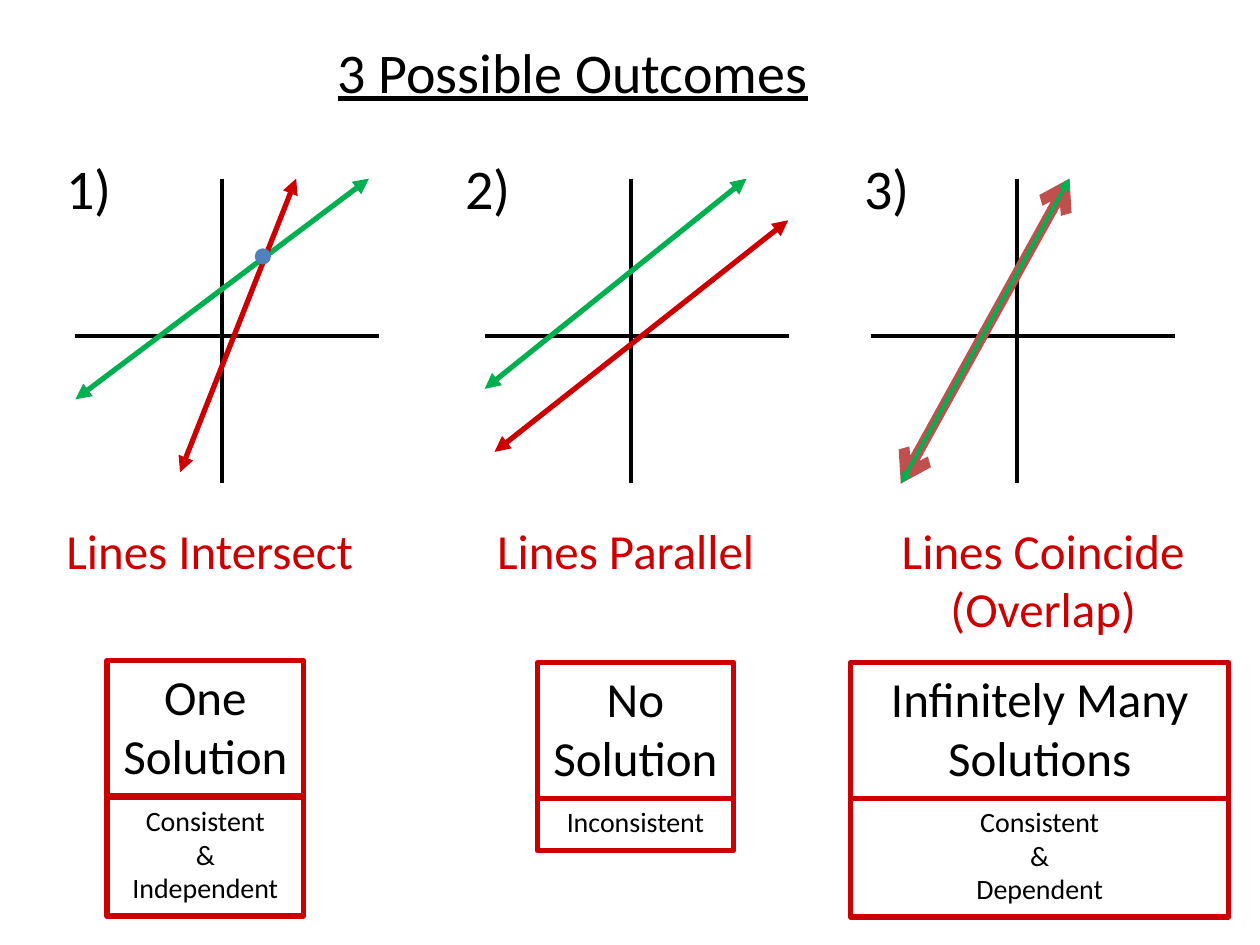
from dataclasses import dataclass

from lxml import etree
from pptx import Presentation
from pptx import util as u
from pptx.dml.color import RGBColor
from pptx.enum import shapes, text
from pptx.oxml import ns


@dataclass(frozen=True)
class Theme:
    font: str = "Calibri"
    black: str = "000000"
    red: str = "CC0000"
    green: str = "00B050"
    brick: str = "C0504D"
    blue: str = "4F81BD"
    heading: int = 32
    body: int = 28
    note: int = 16
    axis: float = 2.25
    rule: float = 3


THEME = Theme()
LEFT, CENTER = text.PP_ALIGN.LEFT, text.PP_ALIGN.CENTER


def set_line(line, color, width):
    line.color.rgb = RGBColor.from_string(color)
    line.width = u.Pt(width)


def write(frame, words, size, color=THEME.black, align=LEFT, wrap=False):
    """Fill a text frame; \\n starts a paragraph, \\v breaks a line."""
    frame.text = words
    frame.word_wrap = wrap
    frame.auto_size = text.MSO_AUTO_SIZE.SHAPE_TO_FIT_TEXT
    frame.vertical_anchor = text.MSO_ANCHOR.TOP
    for paragraph in frame.paragraphs:
        paragraph.alignment = align
        paragraph.font.name = THEME.font
        paragraph.font.size = u.Pt(size)
        paragraph.font.color.rgb = RGBColor.from_string(color)


def add_words(slide, box, *args, **kwargs):
    label = slide.shapes.add_textbox(*map(u.Cm, box))
    write(label.text_frame, *args, **kwargs)
    return label


def add_line(slide, start, end, color, width, arrow=None):
    line = slide.shapes.add_connector(
        shapes.MSO_CONNECTOR.STRAIGHT, *map(u.Cm, (*start, *end)))
    set_line(line.line, color, width)
    if arrow:
        outline = line.line._get_or_add_ln()
        for tip in ("a:headEnd", "a:tailEnd"):
            etree.SubElement(outline, ns.qn(tip)).set("type", arrow)
    etree.SubElement(line._element.spPr, ns.qn("a:effectLst"))


def add_title(slide, box):
    title = slide.shapes.title
    title.left, title.top, title.width, title.height = map(u.Cm, box)
    write(title.text_frame, "3 Possible Outcomes", THEME.heading, wrap=True)
    title.text_frame.paragraphs[0].font.underline = True


def add_graph(slide, left, top, lines, crossing=None):
    """Axes with lines on them, all measured from the graph's corner."""
    side, y_axis, x_axis = 6.13, 2.95, 3.17
    axes = [((y_axis, 0), (y_axis, side), THEME.black, THEME.axis),
            ((0, x_axis), (side, x_axis), THEME.black, THEME.axis)]
    for (x1, y1), (x2, y2), *style in axes + lines:
        add_line(slide, (left + x1, top + y1), (left + x2, top + y2), *style)
    if crossing:
        size = 0.3
        x, y = crossing
        dot = slide.shapes.add_shape(
            shapes.MSO_SHAPE.OVAL, u.Cm(left + x - size / 2),
            u.Cm(top + y - size / 2), u.Cm(size), u.Cm(size))
        dot.shadow.inherit = False
        dot.fill.solid()
        dot.fill.fore_color.rgb = RGBColor.from_string(THEME.blue)
        set_line(dot.line, THEME.blue, 0.75)


def add_answer(slide, left, top, width, solution, kind, kind_top, kind_height):
    """Number of solutions, with the kind of system boxed beneath."""
    for box, words, size in (
            ((left, top, width, 2.74), solution, THEME.body),
            ((left, top + kind_top, width, kind_height), kind, THEME.note)):
        framed = add_words(slide, box, words, size, align=CENTER, wrap=True)
        set_line(framed.line, THEME.red, THEME.rule)


def add_outcome(slide, left, top, outcome):
    """One column: number, graph, caption and answer."""
    add_words(slide, (left, top, 1.45, 1.6), outcome["number"], THEME.heading)
    add_graph(slide, left + outcome["graph_dx"], top + 0.63,
              outcome["lines"], outcome.get("crossing"))
    dx, width, height, words, align = outcome["caption"]
    add_words(slide, (left + dx, top + 7.39, width, height), words,
              THEME.body, THEME.red, align)
    dx, dy, *answer = outcome["answer"]
    add_answer(slide, left + dx, top + dy, *answer)


GREEN = (THEME.green, THEME.rule, "triangle")
RED = (THEME.red, THEME.rule, "triangle")
OVERLAP = ((0.61, 6.15), (4.01, 0))
OUTCOMES = [
    {"number": "1)", "graph_dx": 0.43,
     "lines": [((0, 4.45), (5.92, 0), *GREEN),
               ((2.11, 5.92), (4.45, 0), *RED)],
     "crossing": (3.78, 1.57),
     "caption": (0, 6.35, 1.45, "Lines Intersect", LEFT),
     "answer": (1.07, 10.34, 3.96, "One\nSolution",
                "Consistent\v&\nIndependent", 2.77, 2.39)},
    {"number": "2)", "graph_dx": 0.64,
     "lines": [((0, 4.24), (5.28, 0), *GREEN),
               ((0.2, 5.51), (6.12, 0.84), *RED)],
     "caption": (0.64, 5.97, 1.45, "Lines Parallel", LEFT),
     "answer": (1.7, 10.39, 3.96, "No\nSolution",
                "Inconsistent", 2.74, 1.04)},
    {"number": "3)", "graph_dx": 0.38,
     "lines": [(*OVERLAP, THEME.brick, 6, "arrow"),
               (*OVERLAP, THEME.green, THEME.axis, "triangle")],
     "caption": (0.61, 6.5, 2.62, "Lines Coincide\n(Overlap)", CENTER),
     "answer": (-0.02, 10.39, 7.62, "Infinitely Many\nSolutions",
                "Consistent\v&\nDependent", 2.74, 2.39)},
]


def main():
    deck = Presentation()
    deck.slide_width, deck.slide_height = u.Cm(25.4), u.Cm(19.05)
    slide = deck.slides.add_slide(deck.slide_layouts.get_by_name("Title Only"))
    add_title(slide, (6.55, 0.62, 10.5, 1.6))
    for column, outcome in enumerate(OUTCOMES):
        add_outcome(slide, 1.09 + column * 8.04, 2.97, outcome)
    deck.save("out.pptx")


if __name__ == "__main__":
    main()
